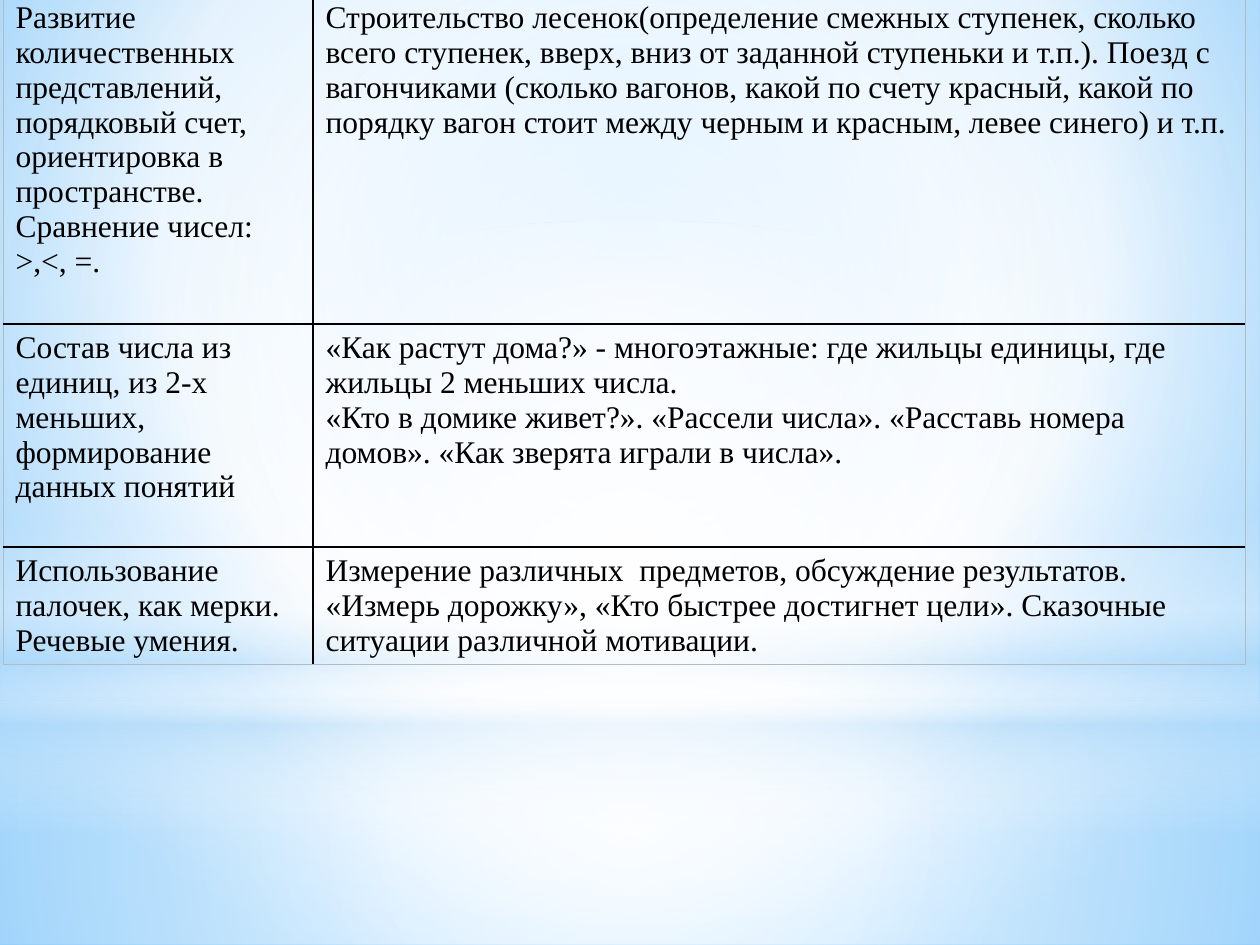
import pptx
import pptx.util
import pptx.dml.color
import pptx.enum.shapes
import pptx.oxml
import pptx.oxml.ns

PX = 914400 // 126
FONT, TEXT_SIZE = "Times New Roman", 18
COLORS = {"text": "000000", "grid": "000000", "frame": "B0BCC4",
          "white": "FFFFFF", "haze": "B4DCFA", "sky": "9ED5FF", "deep": "5BB9FF"}

# Table content: skill, then the games for it, one string a paragraph
ACTIVITIES = [
    (["Развитие количественных представлений, порядковый счет, ориентировка в "
      "пространстве. Сравнение чисел: >,<, =."],
     ["Строительство лесенок(определение смежных ступенек, сколько всего ступенек, "
      "вверх, вниз от заданной ступеньки и т.п.). Поезд с вагончиками (сколько вагонов, "
      "какой по счету красный, какой по порядку вагон стоит между черным и красным, "
      "левее синего) и т.п."]),
    (["Состав числа из единиц, из 2-х меньших, формирование данных понятий"],
     ["«Как растут дома?» - многоэтажные: где жильцы единицы, где жильцы 2 меньших числа.",
      "«Кто в домике живет?». «Рассели числа». «Расставь номера домов». "
      "«Как зверята играли в числа»."]),
    (["Использование палочек, как мерки. Речевые умения."],
     ["Измерение различных  предметов, обсуждение результатов.",
      "«Измерь дорожку», «Кто быстрее достигнет цели». Сказочные ситуации "
      "различной мотивации."]),
]
TABLE_LEFT, TABLE_TOP = 3, -6
COLUMN_WIDTHS = [310, 932]
ROW_HEIGHTS = [330, 223, 117]

# Gradients: stops of (position, color, opacity) in percent
CENTER = (50, 50, 50, 50)
SKY = [(0, "sky", 100), (60, "white", 100), (100, "deep", 100)]
SKY_FOCUS = (20, 10, 20, 60)

# Backdrop layers: shape, box in px, stops, focus (None for a vertical gradient)
SHAPES = pptx.enum.shapes.MSO_SHAPE
LAYERS = [
    (SHAPES.RECTANGLE, (0, 703, 1260, 242),
     [(0, "white", 91), (37, "white", 76), (100, "haze", 79)], CENTER),
    (SHAPES.RECTANGLE, (0, 0, 1260, 703),
     [(0, "white", 89), (48, "white", 62), (100, "haze", 79)], CENTER),
    (SHAPES.RECTANGLE, (0, 519, 1260, 315),
     [(0, "white", 0), (29, "white", 30), (45, "haze", 40),
      (55, "white", 26), (65, "haze", 60), (100, "white", 0)], None),
    (SHAPES.OVAL, (0, 221, 1260, 703),
     [(0, "white", 100), (56, "white", 0)], CENTER),
]


def px(length):
    return pptx.util.Emu(length * PX)


def xml(text):
    return pptx.oxml.parse_xml(text.replace(">", f" {pptx.oxml.ns.nsdecls('a')}>", 1))


def set_gradient(fill, owner, stops, focus):
    """Put a gradient in place of the fill of owner."""
    fill.solid()
    stop_list = "".join(
        f'<a:gs pos="{position * 1000}"><a:srgbClr val="{COLORS[color]}">'
        f'<a:alpha val="{opacity * 1000}"/></a:srgbClr></a:gs>'
        for position, color, opacity in stops)
    if focus:
        sides = " ".join(f'{side}="{value * 1000}"' for side, value in zip("ltrb", focus))
        direction = f'<a:path path="circle"><a:fillToRect {sides}/></a:path>'
    else:
        direction = '<a:lin ang="5400000" scaled="0"/>'
    solid = owner.xpath(".//a:solidFill")[0]
    solid.getparent().replace(solid, xml(
        f'<a:gradFill rotWithShape="1"><a:gsLst>{stop_list}</a:gsLst>{direction}</a:gradFill>'))


def set_borders(cell, outer_sides):
    """Black lines inside the table, a thin pale one around it."""
    properties = cell._tc.get_or_add_tcPr()
    for index, side in enumerate("LRTB"):
        color, width = ("frame", 6350) if side in outer_sides else ("grid", 12700)
        properties.insert(index, xml(
            f'<a:ln{side} w="{width}"><a:solidFill><a:srgbClr val="{COLORS[color]}"/>'
            f'</a:solidFill></a:ln{side}>'))


def write_cell(cell, paragraphs):
    cell.text_frame.text = "\n".join(paragraphs)
    for paragraph in cell.text_frame.paragraphs:
        for run in paragraph.runs:
            run.font.name = FONT
            run.font.size = pptx.util.Pt(TEXT_SIZE)
            run.font.color.rgb = pptx.dml.color.RGBColor.from_string(COLORS["text"])


def main():
    deck = pptx.Presentation()
    deck.slide_width, deck.slide_height = px(1260), px(945)
    slide = deck.slides.add_slide(deck.slide_layouts[6])

    # Backdrop
    set_gradient(slide.background.fill, slide.element, SKY, SKY_FOCUS)
    for outline, box, stops, focus in LAYERS:
        layer = slide.shapes.add_shape(outline, *map(px, box))
        layer.shadow.inherit = False
        set_gradient(layer.fill, layer.element, stops, focus)
        layer.line.fill.background()

    # Table of activities
    last_row, last_column = len(ROW_HEIGHTS) - 1, len(COLUMN_WIDTHS) - 1
    activities = slide.shapes.add_table(
        last_row + 1, last_column + 1, px(TABLE_LEFT), px(TABLE_TOP),
        px(sum(COLUMN_WIDTHS)), px(sum(ROW_HEIGHTS))).table
    activities.first_row = activities.horz_banding = False
    for column, width in zip(activities.columns, COLUMN_WIDTHS):
        column.width = px(width)
    for row, height in zip(activities.rows, ROW_HEIGHTS):
        row.height = px(height)
    for r, row_texts in enumerate(ACTIVITIES):
        for c, paragraphs in enumerate(row_texts):
            cell = activities.cell(r, c)
            write_cell(cell, paragraphs)
            cell.fill.background()
            edges = {"L": c == 0, "R": c == last_column, "T": r == 0, "B": r == last_row}
            set_borders(cell, [side for side, outer in edges.items() if outer])

    deck.save("out.pptx")


if __name__ == "__main__":
    main()
